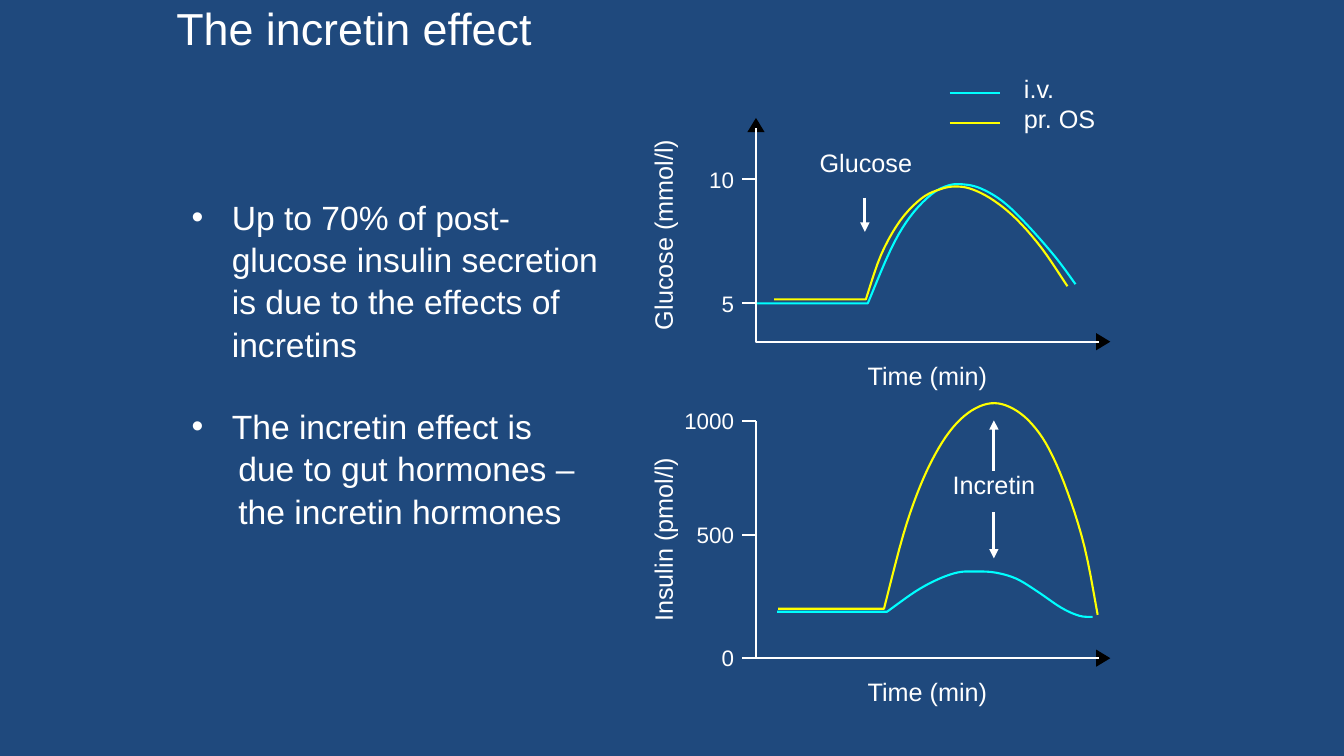
from dataclasses import dataclass
from lxml.etree import SubElement
from pptx import Presentation
from pptx.dml.color import RGBColor
from pptx.enum.shapes import MSO_CONNECTOR, MSO_SHAPE
from pptx.enum.text import MSO_ANCHOR, MSO_AUTO_SIZE, PP_ALIGN
from pptx.oxml.ns import qn
from pptx.util import Inches, Pt


@dataclass(frozen=True)
class Theme:
    back: RGBColor = RGBColor(0x1F, 0x49, 0x7D)
    text: RGBColor = RGBColor(0xFF, 0xFF, 0xFF)
    tip: RGBColor = RGBColor(0, 0, 0)
    iv: RGBColor = RGBColor(0, 0xFF, 0xFF)
    oral: RGBColor = RGBColor(0xFF, 0xFF, 0)
    font: str = "Arial"
    title: int = 32
    body: int = 24
    label: int = 18
    tick: int = 16
    thin: float = 1.5
    thick: float = 2.25


@dataclass(frozen=True)
class Box:
    x: float
    y: float
    w: float
    h: float


THEME = Theme()
COLS, ROWS = 133.33, 75
ROW = 3.7


def cell(n):
    return Inches(n / 10)


def style(para, size, align=PP_ALIGN.LEFT, space=1.0):
    para.font.name = THEME.font
    para.font.size = Pt(size)
    para.font.color.rgb = THEME.text
    para.alignment = align
    para.line_spacing = space
    para.space_before = Pt(0)


def label(slide, text, box, size=THEME.label, align=PP_ALIGN.CENTER, space=0.9, turn=0):
    shape = slide.shapes.add_textbox(*map(cell, (box.x, box.y, box.w, box.h)))
    shape.rotation = turn
    shape.text_frame.word_wrap = True
    para = shape.text_frame.paragraphs[0]
    para.text = text
    style(para, size, align, space)


def line(slide, start, end, color=THEME.text, width=THEME.thin, arrow=False):
    link = slide.shapes.add_connector(
        MSO_CONNECTOR.STRAIGHT, *map(cell, (*start, *end)))
    link.line.color.rgb = color
    link.line.width = Pt(width)
    props = link._element.spPr
    if arrow:
        SubElement(props.find(qn("a:ln")), qn("a:tailEnd"), type="triangle")
    SubElement(props, qn("a:effectLst"))


def trace(slide, points, color):
    spots = [(cell(x), cell(y)) for x, y in points]
    pen = slide.shapes.build_freeform(*spots[0])
    pen.add_line_segments(spots[1:], close=False)
    shape = pen.convert_to_shape()
    shape.shadow.inherit = False
    shape.fill.background()
    shape.line.color.rgb = color
    shape.line.width = Pt(THEME.thin)


def smooth(knots, steps=5):
    ends = [knots[0], *knots, knots[-1]]
    out = [knots[0]]
    for a, b, c, d in zip(ends, ends[1:], ends[2:], ends[3:]):
        for step in range(1, steps + 1):
            t = step / steps
            out.append(tuple(
                q + t * (r - p) / 2
                + t * t * (2 * p - 5 * q + 4 * r - s) / 2
                + t ** 3 * (3 * q - p - 3 * r + s) / 2
                for p, q, r, s in zip(a, b, c, d)))
    return out


def tip(slide, x, y, turn):
    w, h = 1.7, 1.4
    shape = slide.shapes.add_shape(
        MSO_SHAPE.ISOSCELES_TRIANGLE, *map(cell, (x - w / 2, y - h / 2, w, h)))
    shape.rotation = turn
    shape.shadow.inherit = False
    shape.fill.solid()
    shape.fill.fore_color.rgb = THEME.tip
    shape.line.fill.background()


def place(shape, box):
    shape.left, shape.top, shape.width, shape.height = map(
        cell, (box.x, box.y, box.w, box.h))
    frame = shape.text_frame
    frame.auto_size = MSO_AUTO_SIZE.NONE
    frame.vertical_anchor = MSO_ANCHOR.TOP
    frame.word_wrap = True
    return frame


def head(slide, box):
    frame = place(slide.shapes.title, box)
    frame.text = "The incretin effect"
    style(frame.paragraphs[0], THEME.title)


def points(slide, box):
    frame = place(slide.placeholders[1], box)
    rows = [
        ("Up to 70% of post-glucose insulin secretion is due to the effects of incretins", True),
        ("The incretin effect is", True),
        ("due to gut hormones –", False),
        ("the incretin hormones", False),
    ]
    frame.text = "\n".join(text for text, dot in rows)
    for para, (text, dot) in zip(frame.paragraphs, rows):
        style(para, THEME.body, space=1.05)
        props = para._p.get_or_add_pPr()
        props.set("marL", str(cell(4 if dot else 4.65)))
        props.set("indent", str(cell(-4 if dot else 0)))
        if dot:
            SubElement(props, qn("a:buChar"), char="•")
        else:
            SubElement(props, qn("a:buNone"))
    frame.paragraphs[1].space_before = Pt(THEME.body * 1.2)


def plot(slide, box, name, ticks, curves):
    low, right = box.y + box.h, box.x + box.w
    tip(slide, right + 0.45, low, 90)
    trace(slide, [(box.x, box.y), (box.x, low), (right, low)], THEME.text)
    for text, row in ticks:
        y = box.y + row
        line(slide, (box.x, y), (box.x - 1.4, y))
        label(slide, text, Box(box.x - 9.2, y - ROW / 2, 8, ROW),
              THEME.tick, PP_ALIGN.RIGHT, 1.0)
    mid = box.y + box.h / 2
    label(slide, name, Box(box.x - 21.25, mid - 2, 24, 4), space=1.0, turn=270)
    label(slide, "Time (min)", Box(box.x, low + 1.65, box.w, ROW))
    for color, start, knots in curves:
        path = [start, *smooth(knots)]
        trace(slide, [(box.x + x, box.y + y) for x, y in path], color)


def glucose(slide, box):
    tip(slide, box.x, box.y - 0.3, 0)
    plot(slide, box, "Glucose (mmol/l)", [("10", 5.1), ("5", 17.4)], [
        (THEME.iv, (0.1, 17.4), [
            (11.1, 17.4), (13.4, 12), (15.3, 8.8), (17.4, 6.6), (19.1, 5.7), (20.6, 5.6),
            (22.3, 6), (24.5, 7.3), (26.9, 9.6), (29.7, 12.8), (31.7, 15.5)]),
        (THEME.oral, (1.8, 17), [
            (10.9, 17), (12.4, 12.6), (14.3, 9.2), (16.4, 7), (18.2, 6.1), (19.8, 5.8),
            (21.5, 6.1), (23.6, 7.2), (25.9, 9.1), (28.4, 12), (30.9, 15.7)]),
    ])
    label(slide, "Glucose", Box(box.x + 4.9, box.y + 1.8, 12, ROW))
    line(slide, (box.x + 10.8, box.y + 6.9), (box.x + 10.8, box.y + 10.3),
         width=THEME.thick, arrow=True)


def insulin(slide, box):
    plot(slide, box, "Insulin (pmol/l)", [("1000", 0), ("500", 11.3), ("0", box.h)], [
        (THEME.oral, (2.2, 18.6), [
            (12.7, 18.6), (14.6, 11.3), (16.3, 6.4), (18.1, 2.7), (19.9, 0.2), (21.8, -1.3),
            (23.7, -1.8), (25.6, -1.2), (27.4, 0.3), (29.1, 2.8), (30.9, 7), (32.6, 12.5),
            (33.9, 19.2)]),
        (THEME.iv, (2.1, 18.9), [
            (13, 18.9), (15.8, 16.9), (18, 15.7), (20, 15), (21.7, 14.9), (23.7, 15),
            (25.8, 15.6), (27.8, 16.8), (30.3, 18.5), (32.1, 19.3), (33.4, 19.4)]),
    ])
    mid = box.x + 23.6
    label(slide, "Incretin", Box(mid - 6, box.y + 4.6, 12, ROW))
    for start, end in [(4.9, -0.1), (9, 13.6)]:
        line(slide, (mid, box.y + start), (mid, box.y + end),
             width=THEME.thick, arrow=True)


def legend(slide, box):
    rows = [("i.v.", THEME.iv), ("pr. OS", THEME.oral)]
    step = box.h / len(rows)
    for i, (text, color) in enumerate(rows):
        y = box.y + (i + 0.5) * step
        line(slide, (box.x, y), (box.x + 5, y), color)
        label(slide, text, Box(box.x + 6.4, y - 2.1, box.w - 6.4, ROW), align=PP_ALIGN.LEFT)


def main():
    deck = Presentation()
    deck.slide_width, deck.slide_height = cell(COLS), cell(ROWS)
    slide = deck.slides.add_slide(deck.slide_layouts[1])
    slide.background.fill.solid()
    slide.background.fill.fore_color.rgb = THEME.back
    head(slide, Box(16.5, -0.4, 95.3, 6.4))
    points(slide, Box(18, 18.8, 44.8, 33.3))
    legend(slide, Box(94.2, 7.7, 18, 6))
    glucose(slide, Box(75, 12.7, 34, 21.2))
    insulin(slide, Box(75, 41.8, 34, 23.5))
    deck.save("out.pptx")


if __name__ == "__main__":
    main()
